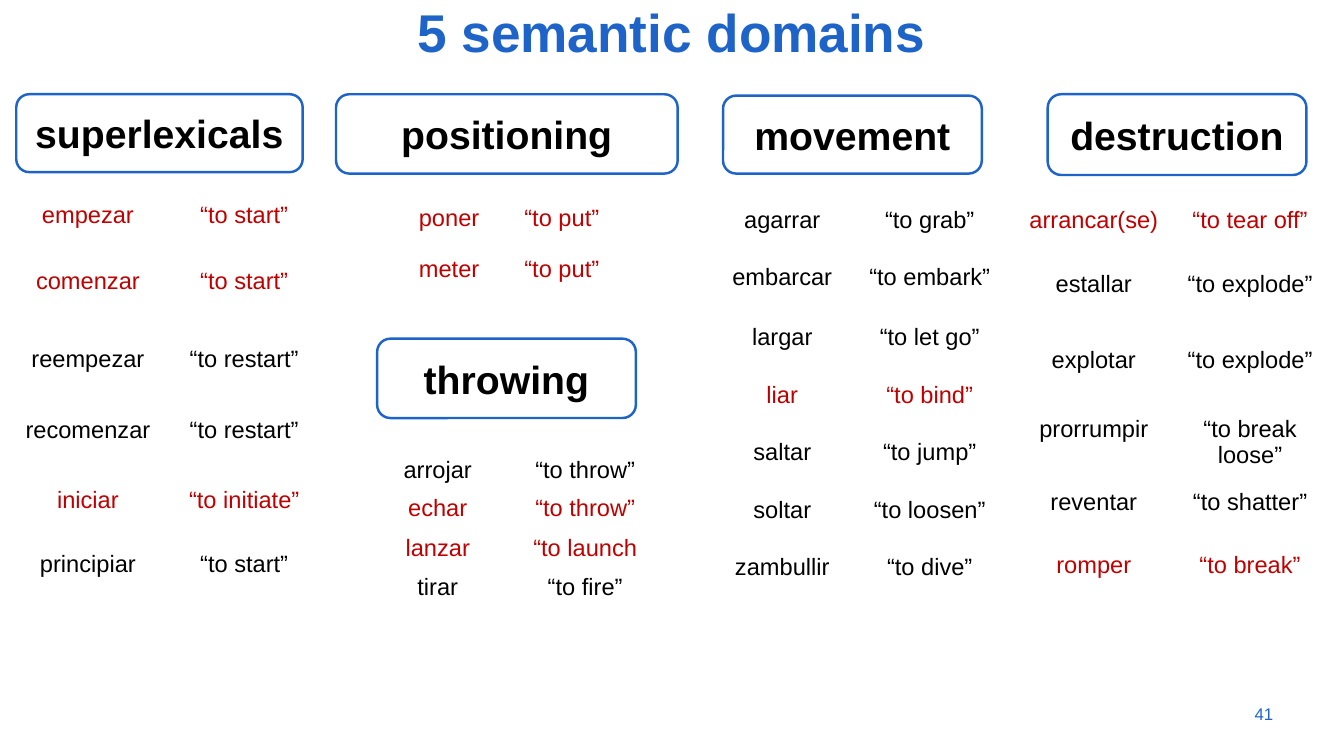
"""Build the slide of five semantic domains with their verbs and glosses."""
from typing import NamedTuple

from pptx import Presentation
from pptx.dml.color import RGBColor
from pptx.enum.shapes import MSO_SHAPE as Preset
from pptx.enum.text import MSO_ANCHOR as Anchor, PP_ALIGN as Align
from pptx.util import Emu, Pt

PX = 9144
FONT = "Arial"
COLORS = {"blue": "1E64C8", "red": "C00000", "black": "000000"}


class Box(NamedTuple):
    left: int
    top: int
    width: int
    height: int


class Verb(NamedTuple):
    word: str
    gloss: str
    height: int
    color: str = "black"


class Domain(NamedTuple):
    name: str
    heading: Box
    left: int
    top: int
    columns: tuple[int, int]
    verbs: list[Verb]


DOMAINS = [
    Domain("superlexicals", Box(23, 133, 404, 110), 22, 281, (204, 237), [
        Verb("empezar", "“to start”", 93, "red"),
        Verb("comenzar", "“to start”", 110, "red"),
        Verb("reempezar", "“to restart”", 100),
        Verb("recomenzar", "“to restart”", 98),
        Verb("iniciar", "“to initiate”", 91, "red"),
        Verb("principiar", "“to start”", 84),
    ]),
    Domain("positioning", Box(474, 133, 482, 112), 557, 284, (153, 165), [
        Verb("poner", "“to put”", 72, "red"),
        Verb("meter", "“to put”", 72, "red"),
    ]),
    Domain("throwing", Box(532, 478, 365, 112), 508, 640, (219, 197), [
        Verb("arrojar", "“to throw”", 54),
        Verb("echar", "“to throw”", 57, "red"),
        Verb("lanzar", "“to launch", 54, "red"),
        Verb("tirar", "“to fire”", 54),
    ]),
    Domain("movement", Box(1020, 135, 365, 110), 994, 287, (219, 197), [
        Verb("agarrar", "“to grab”", 81),
        Verb("embarcar", "“to embark”", 85),
        Verb("largar", "“to let go”", 81),
        Verb("liar", "“to bind”", 81, "red"),
        Verb("saltar", "“to jump”", 81),
        Verb("soltar", "“to loosen”", 81),
        Verb("zambullir", "“to dive”", 81),
    ]),
    Domain("destruction", Box(1478, 133, 365, 114), 1441, 287, (204, 237), [
        Verb("arrancar(se)", "“to tear off”", 91, "red"),
        Verb("estallar", "“to explode”", 107),
        Verb("explotar", "“to explode”", 97),
        Verb("prorrumpir", "“to break loose”", 103),
        Verb("reventar", "“to shatter”", 89),
        Verb("romper", "“to break”", 81, "red"),
    ]),
]


def emu(box: Box) -> list[Emu]:
    return [Emu(length * PX) for length in box]


def write(frame, text: str, size: float, color: str, bold: bool = False,
          align: Align = Align.CENTER) -> None:
    paragraph = frame.paragraphs[0]
    paragraph.text = text
    paragraph.alignment = align
    font = paragraph.font
    font.name, font.size, font.bold = FONT, Pt(size), bold
    font.color.rgb = RGBColor.from_string(COLORS[color])


def add_label(slide, box: Box, anchor: Anchor):
    frame = slide.shapes.add_textbox(*emu(box)).text_frame
    frame.word_wrap = True
    frame.vertical_anchor = anchor
    return frame


def add_heading(slide, domain: Domain) -> None:
    heading = slide.shapes.add_shape(Preset.ROUNDED_RECTANGLE, *emu(domain.heading))
    heading.shadow.inherit = False
    heading.fill.background()
    heading.line.color.rgb = RGBColor.from_string(COLORS["blue"])
    heading.line.width = Pt(2.5)
    heading.text_frame.vertical_anchor = Anchor.MIDDLE
    write(heading.text_frame, domain.name, 39.8, "black", bold=True)


def add_verbs(slide, domain: Domain) -> None:
    box = Box(domain.left, domain.top, sum(domain.columns),
              sum(verb.height for verb in domain.verbs))
    table = slide.shapes.add_table(len(domain.verbs), 2, *emu(box)).table
    table.first_row = table.horz_banding = False
    for column, width in zip(table.columns, domain.columns):
        column.width = Emu(width * PX)
    for row, verb in zip(table.rows, domain.verbs):
        row.height = Emu(verb.height * PX)
        for cell, text in zip(row.cells, (verb.word, verb.gloss)):
            cell.fill.background()
            write(cell.text_frame, text, 24, verb.color)


def main() -> None:
    deck = Presentation()
    deck.slide_width, deck.slide_height = Emu(1896 * PX), Emu(1067 * PX)
    slide = deck.slides.add_slide(deck.slide_layouts[6])

    title = add_label(slide, Box(88, 1, 1718, 94), Anchor.BOTTOM)
    write(title, "5 semantic domains", 54, "blue", bold=True)
    title.paragraphs[0].line_spacing = 0.9
    page_number = add_label(slide, Box(1705, 979, 101, 57), Anchor.MIDDLE)
    write(page_number, "41", 17.1, "blue", align=Align.RIGHT)

    for domain in DOMAINS:
        add_heading(slide, domain)
        add_verbs(slide, domain)
    deck.save("out.pptx")


if __name__ == "__main__":
    main()
